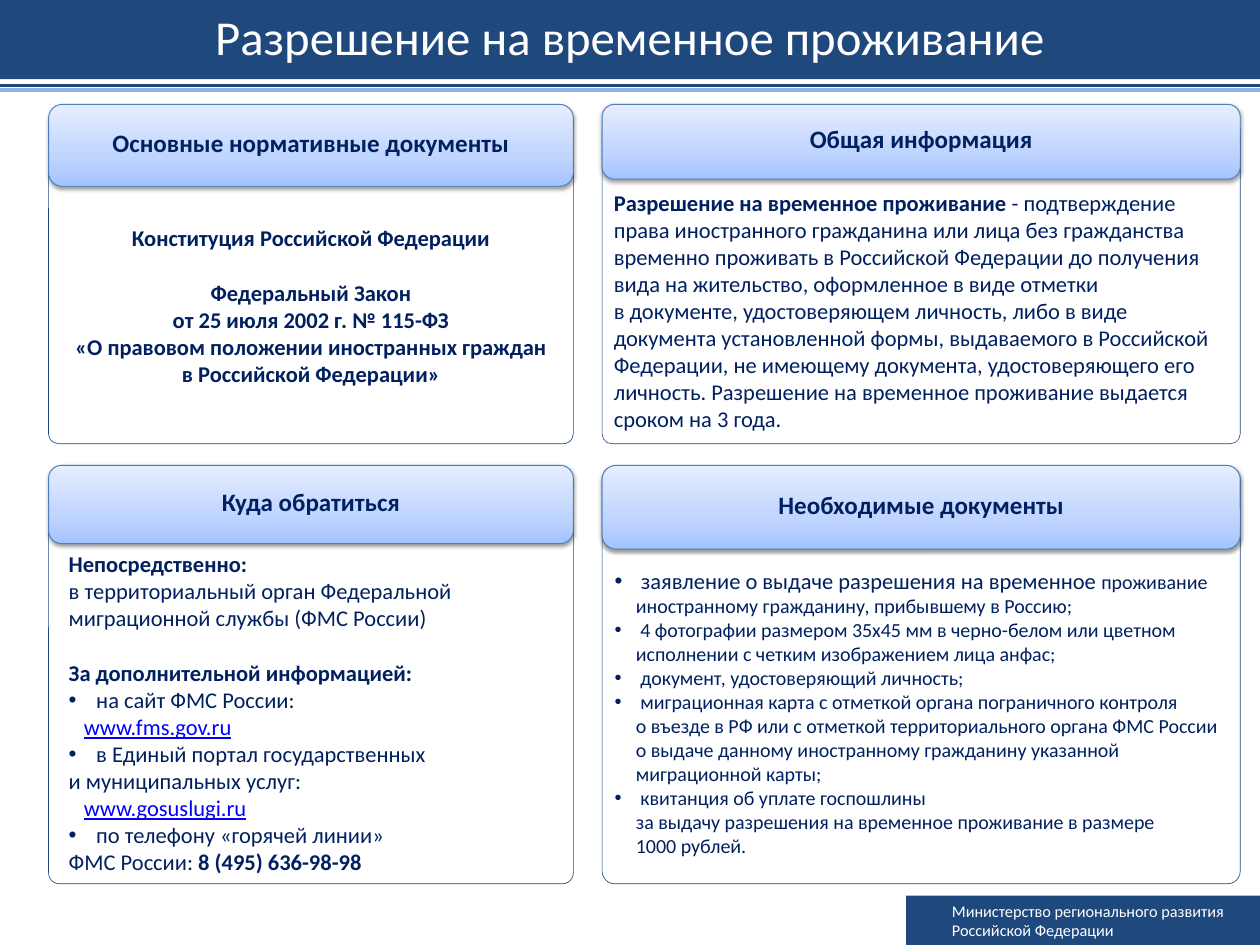
"""Builds a four-panel slide about the temporary residence permit."""
from copy import deepcopy

from lxml import etree
from pptx import Presentation
from pptx.dml.color import RGBColor
from pptx.enum import shapes, text
from pptx.oxml import ns
from pptx.util import Pt

BLUE = RGBColor(0x1F, 0x49, 0x7D)
LIGHT_BLUE = RGBColor(0x8E, 0xB4, 0xE3)
NAVY = RGBColor(0x00, 0x20, 0x60)
LINK = RGBColor(0x00, 0x00, 0xFF)
WHITE = RGBColor(0xFF, 0xFF, 0xFF)
BORDER = RGBColor(0x4B, 0x7E, 0xBC)
GRADIENT_BOTTOM = RGBColor(0xA4, 0xC4, 0xFF)
GRADIENT_MIDDLE = RGBColor(0xBF, 0xD4, 0xFF)
GRADIENT_TOP = RGBColor(0xE6, 0xEE, 0xFF)

presentation = Presentation()
presentation.slide_width, presentation.slide_height = Pt(1008), Pt(756)
slide = presentation.slides.add_slide(presentation.slide_layouts[6])


def add_box(kind, left, top, width, height, insets, anchor=text.MSO_ANCHOR.MIDDLE):
    shape = slide.shapes.add_shape(kind, Pt(left), Pt(top), Pt(width), Pt(height))
    shape.shadow.inherit = False
    shape.line.fill.background()
    frame = shape.text_frame
    frame.word_wrap = True
    frame.vertical_anchor = anchor
    frame.margin_left, frame.margin_top, frame.margin_right, frame.margin_bottom = map(Pt, insets)
    return shape


def write(shape, number, runs, align=text.PP_ALIGN.LEFT, left=0, hanging=0, before=0, spacing=None):
    frame = shape.text_frame
    paragraph = frame.add_paragraph() if number else frame.paragraphs[0]
    properties = paragraph._p.get_or_add_pPr()
    properties.set("marL", str(Pt(left)))
    properties.set("indent", str(Pt(-hanging)))
    if hanging:
        etree.SubElement(properties, ns.qn("a:buFont"), typeface="Arial")
        etree.SubElement(properties, ns.qn("a:buChar"), char="•")
    paragraph.alignment = align
    if before:
        paragraph.space_before = Pt(before)
    if spacing:
        paragraph.line_spacing = Pt(spacing)
    for content, size, bold, color in runs:
        run = paragraph.add_run()
        run.text = content
        run.font.name = "Calibri"
        run.font.size = Pt(size)
        run.font.bold = bold
        run.font.color.rgb = color
        run.font.underline = color == LINK


CENTER = text.PP_ALIGN.CENTER
RECTANGLE = shapes.MSO_SHAPE.RECTANGLE
ROUNDED = shapes.MSO_SHAPE.ROUNDED_RECTANGLE

footer = add_box(RECTANGLE, 725, 716.4, 283, 39.6, (7.2, 3.6, 7.2, 3.6))
footer.fill.solid()
footer.fill.fore_color.rgb = BLUE
for number, line in enumerate(["Министерство регионального развития", "Российской Федерации"]):
    write(footer, number, [(line, 13, False, WHITE)], left=29.5)

for y, color in [(68.4, BLUE), (72, LIGHT_BLUE)]:
    rule = slide.shapes.add_connector(shapes.MSO_CONNECTOR.STRAIGHT, Pt(0), Pt(y), Pt(1008), Pt(y))
    rule.line.color.rgb = color
    rule.line.width = Pt(3)
    etree.SubElement(rule._element.spPr, ns.qn("a:effectLst"))

title = add_box(RECTANGLE, 0, 0, 1008, 63.4, (10, 5, 10, 5))
title.fill.solid()
title.fill.fore_color.rgb = BLUE
write(title, 0, [("Разрешение на временное проживание", 39, False, WHITE)], CENTER, spacing=40.6)


law_lines = [
    ("Конституция Российской Федерации", 0),
    ("Федеральный Закон", 22),
    ("от 25 июля 2002 г. № 115-ФЗ", 0),
    ("«О правовом положении иностранных граждан", 0),
    ("в Российской Федерации»", 0),
]
laws = [([(line, 18, True, NAVY)], {"align": CENTER, "before": gap}) for line, gap in law_lines]

information = [
    ([("Разрешение на временное проживание ", 18, True, NAVY),
      ("- подтверждение права иностранного гражданина или лица без гражданства временно проживать "
       "в Российской Федерации до получения вида на жительство, оформленное в виде отметки",
       18, False, NAVY)], {}),
    ([("в документе, удостоверяющем личность, либо в виде документа установленной формы, "
       "выдаваемого в Российской Федерации, не имеющему документа, удостоверяющего его личность. "
       "Разрешение на временное проживание выдается сроком на 3 года.", 18, False, NAVY)], {}),
]

PLAIN = {"left": 6.5}
BULLET = {"left": 28.5, "hanging": 22}
ADDRESS = {"left": 18.5}
contacts = [
    ([("Непосредственно:", 18, True, NAVY)], PLAIN),
    ([("в территориальный орган Федеральной миграционной службы (ФМС России)", 18, False, NAVY)], PLAIN),
    ([("За дополнительной информацией:", 18, True, NAVY)], {"left": 6.5, "before": 22}),
    ([("на сайт ФМС России:", 18, False, NAVY)], BULLET),
    ([("www.fms.gov.ru", 18, False, LINK)], ADDRESS),
    ([("в Единый портал государственных", 18, False, NAVY)], BULLET),
    ([("и муниципальных услуг:", 18, False, NAVY)], PLAIN),
    ([("www.gosuslugi.ru", 18, False, LINK)], ADDRESS),
    ([("по телефону «горячей линии»", 18, False, NAVY)], BULLET),
    ([("ФМС России: ", 18, False, NAVY), ("8 (495) 636-98-98", 18, True, NAVY)], PLAIN),
]

ITEM = {"left": 17, "hanging": 17}
CONTINUED = {"left": 17}
document_lines = [
    (" 4 фотографии размером 35x45 мм в черно-белом или цветном исполнении "
     "с четким изображением лица анфас;", ITEM),
    (" документ, удостоверяющий личность;", ITEM),
    (" миграционная карта с отметкой органа пограничного контроля", ITEM),
    ("о въезде в РФ или с отметкой территориального органа ФМС России", CONTINUED),
    ("о выдаче данному иностранному гражданину указанной миграционной карты;", CONTINUED),
    (" квитанция об уплате госпошлины", ITEM),
    ("за выдачу разрешения на временное проживание в размере", CONTINUED),
    ("1000 рублей.", CONTINUED),
]
documents = [
    ([(" заявление о выдаче разрешения на временное ", 18, False, NAVY),
      ("проживание иностранному гражданину, прибывшему в Россию;", 16, False, NAVY)], ITEM),
] + [([(line, 16, False, NAVY)], layout) for line, layout in document_lines]

LEFT_COLUMN, RIGHT_COLUMN = (38.9, 419.8), (481.7, 510.5)
TOP_ROW, BOTTOM_ROW = (83.5, 355), (372.3, 707)
panels = [
    ("Основные нормативные документы", LEFT_COLUMN, TOP_ROW, 65.5, 87.8, 89.5, laws),
    ("Необходимые документы", RIGHT_COLUMN, BOTTOM_ROW, 67, 373, 77.5, documents),
    ("Общая информация", RIGHT_COLUMN, TOP_ROW, 59.8, 95.8, 53, information),
    ("Куда обратиться", LEFT_COLUMN, BOTTOM_ROW, 62.6, 416.2, 21.5, contacts),
]
for heading, (left, width), (top, bottom), header_height, body_top, inset, paragraphs in panels:
    body = add_box(ROUNDED, left, body_top, width, bottom - body_top,
                   (7.2, inset, 7.2, 0), text.MSO_ANCHOR.TOP)
    body.adjustments[0] = 0.03
    body.fill.background()
    body.line.color.rgb = BLUE
    body.line.width = Pt(0.5)
    for number, (runs, layout) in enumerate(paragraphs):
        write(body, number, runs, **layout)

    header = add_box(ROUNDED, left, top, width, header_height, (0, 3.6, 0, 3.6))
    header.line.color.rgb = BORDER
    header.line.width = Pt(0.75)
    header.fill.gradient()
    header.fill.gradient_angle = 90
    properties = header._element.spPr
    stop_list = properties.find(ns.qn("a:gradFill")).find(ns.qn("a:gsLst"))
    stop_list.insert(1, deepcopy(stop_list[0]))
    colors = [(0, GRADIENT_BOTTOM), (0.35, GRADIENT_MIDDLE), (1, GRADIENT_TOP)]
    for stop, (position, color) in zip(header.fill.gradient_stops, colors):
        stop.position = position
        stop.color.rgb = color
    shadow = etree.SubElement(properties.find(ns.qn("a:effectLst")), ns.qn("a:outerShdw"),
                              blurRad=str(Pt(3.1)), dist=str(Pt(1.6)), dir="5400000", rotWithShape="0")
    shade = etree.SubElement(shadow, ns.qn("a:srgbClr"), val="000000")
    etree.SubElement(shade, ns.qn("a:alpha"), val="38000")
    write(header, 0, [(heading, 20, True, NAVY)], CENTER, spacing=19.6)

presentation.save("out.pptx")
